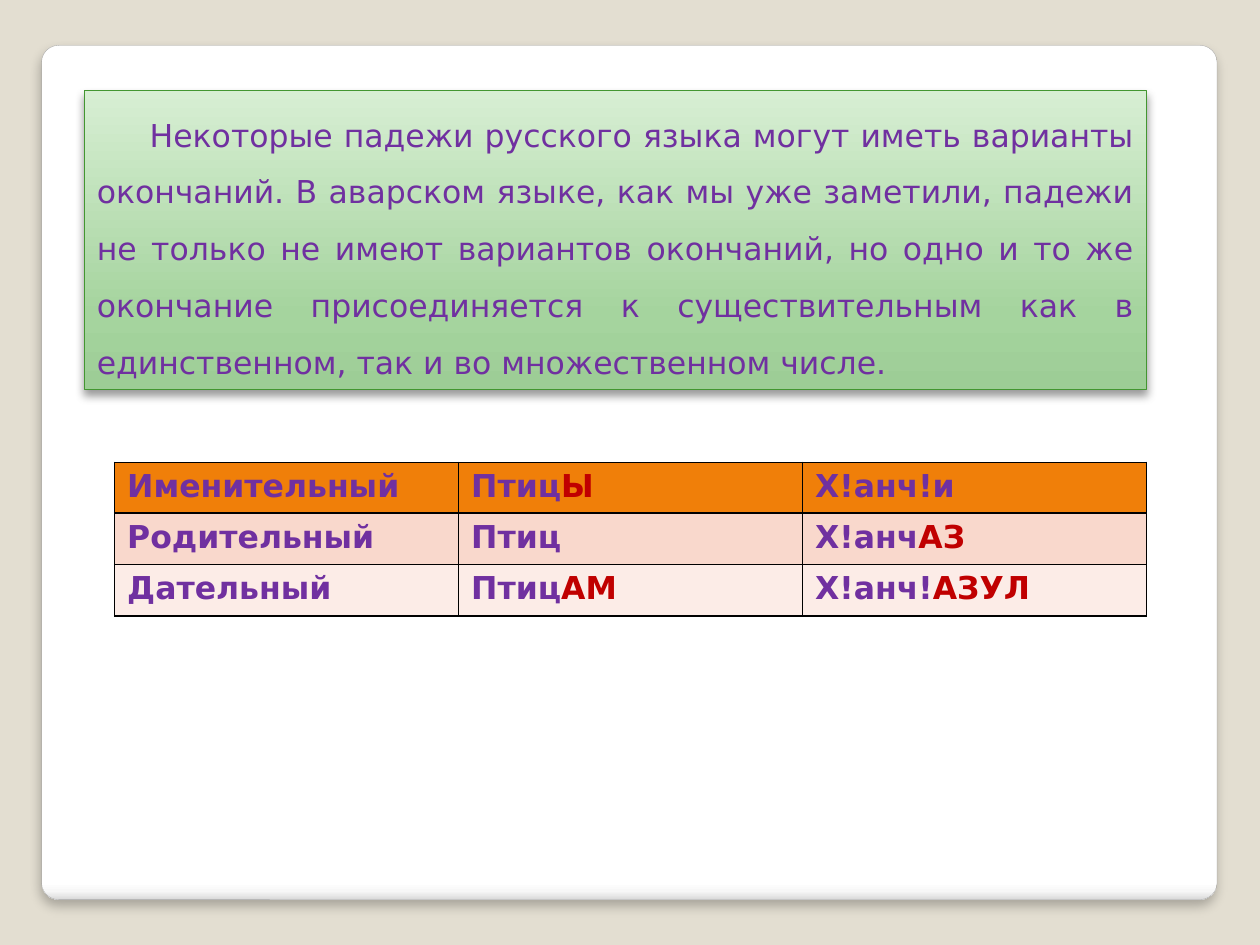
from lxml import etree
from pptx import Presentation
from pptx import util as u
from pptx.dml.color import RGBColor
from pptx.enum import shapes, text
from pptx.oxml import ns

COLORS = {
    "background": "E3DED1", "panel_line": "A4A4A4", "green_line": "439631",
    "purple": "7030A0", "red": "C00000", "black": "000000",
}
PANEL_STOPS = [(0, "FFFFFF"), (98, "FFFFFF"), (99, "F7F7F7"), (100, "DADADA")]
GREEN_STOPS = [(0, "9DCD96"), (25, "A5D49E"), (100, "D7EED3")]
ROW_FILLS = ["F07F09", "F9D8CC", "FCECE7"]


def add_run(paragraph, words, color="purple", bold=False, size=18):
    run = paragraph.add_run()
    run.text = words
    run.font.name = "DejaVu Sans"
    run.font.size = u.Pt(size)
    run.font.bold = bold
    run.font.color.rgb = RGBColor.from_string(COLORS[color])


def add_node(parent, tag, color=None, **attributes):
    """Add a DrawingML element, with a colour inside it if one is given."""
    node = etree.SubElement(parent, ns.qn(tag))
    for name, value in attributes.items():
        node.set(name, str(value))
    if color:
        etree.SubElement(node, ns.qn("a:srgbClr")).set("val", color)
    return node


presentation = Presentation()
presentation.slide_width = u.Inches(10)
presentation.slide_height = u.Inches(7.5)
slide = presentation.slides.add_slide(presentation.slide_layouts[6])
slide.background.fill.solid()
slide.background.fill.fore_color.rgb = RGBColor.from_string(COLORS["background"])

# White panel and green text box: gradient, outline and soft shadow
panel = slide.shapes.add_shape(
    shapes.MSO_SHAPE.ROUNDED_RECTANGLE,
    u.Inches(0.33), u.Inches(0.36), u.Inches(9.33), u.Inches(6.78))
panel.adjustments[0] = 0.02
statement = slide.shapes.add_shape(
    shapes.MSO_SHAPE.RECTANGLE,
    u.Inches(0.67), u.Inches(0.72), u.Inches(8.43), u.Inches(2.37))

for shape, stops, angle, line_color, line_width, opacity, blur, distance in [
    (panel, PANEL_STOPS, 90, "panel_line", 0.16, 25, 6, 4),
    (statement, GREEN_STOPS, 270, "green_line", 0.75, 40, 5.2, 3),
]:
    shape.line.color.rgb = RGBColor.from_string(COLORS[line_color])
    shape.line.width = u.Pt(line_width)

    shape.fill.gradient()
    gradient = shape._element.spPr.find(ns.qn("a:gradFill"))
    for child in list(gradient):
        gradient.remove(child)
    stop_list = add_node(gradient, "a:gsLst")
    for position, color in stops:
        add_node(stop_list, "a:gs", color, pos=position * 1000)
    add_node(gradient, "a:lin", ang=angle * 60000, scaled=0)

    shape.shadow.inherit = False
    effects = shape._element.spPr.find(ns.qn("a:effectLst"))
    shadow = add_node(effects, "a:outerShdw", COLORS["black"],
                      blurRad=u.Pt(blur), dist=u.Pt(distance),
                      dir=90 * 60000, algn="t", rotWithShape=0)
    add_node(shadow[0], "a:alpha", val=opacity * 1000)

# Statement text
frame = statement.text_frame
frame.word_wrap = True
frame.vertical_anchor = text.MSO_ANCHOR.TOP
frame.auto_size = text.MSO_AUTO_SIZE.SHAPE_TO_FIT_TEXT
paragraph = frame.paragraphs[0]
paragraph.alignment = text.PP_ALIGN.JUSTIFY
paragraph.line_spacing = 1.5
paragraph._p.get_or_add_pPr().set("indent", str(u.Inches(0.42)))
add_run(paragraph,
        "Некоторые падежи русского языка могут иметь варианты окончаний. "
        "В аварском языке, как мы уже заметили, падежи не только не имеют "
        "вариантов окончаний, но одно и то же окончание присоединяется к "
        "существительным как в единственном, так и во множественном числе.")

# Table of cases: each cell holds a stem and a highlighted ending
CASES = [
    [("Именительный", ""), ("Птиц", "Ы"), ("Х!анч!и", "")],
    [("Родительный", ""), ("Птиц", ""), ("Х!анч", "АЗ")],
    [("Дательный", ""), ("Птиц", "АМ"), ("Х!анч!", "АЗУЛ")],
]
table = slide.shapes.add_table(
    3, 3, u.Inches(0.91), u.Inches(3.67), u.Inches(8.19), u.Inches(1.21)).table
for row, height in zip(table.rows, (0.39, 0.41, 0.41)):
    row.height = u.Inches(height)

for row, cases, fill in zip(table.rows, CASES, ROW_FILLS):
    for cell, (stem, ending) in zip(row.cells, cases):
        properties = cell._tc.get_or_add_tcPr()
        for side in ("a:lnL", "a:lnR", "a:lnT", "a:lnB"):
            border = add_node(properties, side, w=u.Pt(1))
            add_node(border, "a:solidFill", COLORS["black"])
        cell.fill.solid()
        cell.fill.fore_color.rgb = RGBColor.from_string(fill)
        paragraph = cell.text_frame.paragraphs[0]
        add_run(paragraph, stem, bold=True)
        if ending:
            add_run(paragraph, ending, color="red", bold=True)

presentation.save("out.pptx")
